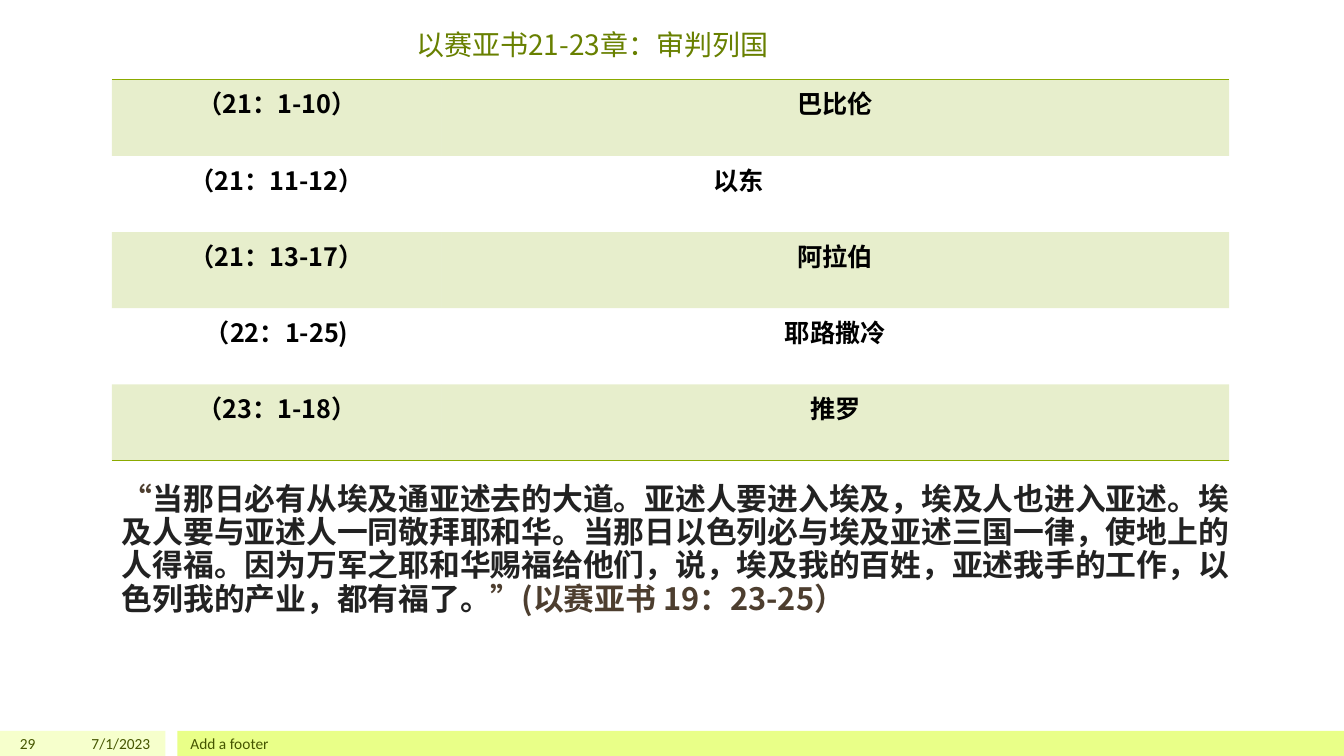
from pptx import Presentation
from pptx.dml.color import RGBColor
from pptx.enum.shapes import MSO_SHAPE as Shape
from pptx.enum.text import MSO_ANCHOR as Anchor, PP_ALIGN as Align
from pptx.oxml import parse_xml
from pptx.oxml.ns import nsdecls, qn
from pptx.util import Pt

PX = 9144
CJK = "Noto Sans CJK SC"
GREEN, BROWN, DARK = "8BAA00", "4D3E2F", "222222"


def tint(code):
    return RGBColor.from_string(code)


def edge(side, code=None):
    fill = f'<a:solidFill><a:srgbClr val="{code}"/></a:solidFill>' if code else "<a:noFill/>"
    return parse_xml(f'<a:{side} {nsdecls("a")} w="12700">{fill}</a:{side}>')


class Deck:
    """Holds the style and current slide, and draws each kind of element."""

    def __init__(self, wide, high):
        self.show = Presentation()
        self.show.slide_width, self.show.slide_height = wide * PX, high * PX
        self.slide = self.show.slides.add_slide(self.show.slide_layouts[6])

    def bar(self, box, code):
        shape = self.slide.shapes.add_shape(Shape.RECTANGLE, *(n * PX for n in box))
        shape.shadow.inherit = False
        shape.fill.solid()
        shape.fill.fore_color.rgb = tint(code)
        shape.line.fill.background()

    def style(self, para, runs, size, font=CJK, bold=False, **form):
        for name, value in form.items():
            setattr(para, name, value)
        for words, code in runs:
            run = para.add_run()
            run.text = words
            look = {"size": Pt(size), "name": font, "bold": bold}
            for name, value in look.items():
                setattr(run.font, name, value)
            run.font.color.rgb = tint(code)
            if font == CJK:
                props = run._r.get_or_add_rPr()
                props.set("lang", "zh-CN")
                props.append(parse_xml(f'<a:ea {nsdecls("a")} typeface="{font}"/>'))

    def text(self, box, runs, size, anchor=Anchor.TOP, **form):
        frame = self.slide.shapes.add_textbox(*(n * PX for n in box)).text_frame
        frame.word_wrap = True
        frame.vertical_anchor = anchor
        self.style(frame.paragraphs[0], runs, size, **form)

    def table(self, box, cols, rows, shift):
        grid = self.slide.shapes.add_table(len(rows), len(cols), *(n * PX for n in box)).table
        grid.first_row = grid.horz_banding = False
        for col, width in zip(grid.columns, cols):
            col.width = width * PX
        for i, row in enumerate(rows):
            for j, words in enumerate(row):
                cell = grid.cell(i, j)
                cell.margin_right = shift.get((i, j), 10) * PX
                self.style(cell.text_frame.paragraphs[0], [(words, "000000")], 18,
                           bold=True, alignment=Align.CENTER)
                self.band(cell, i % 2 == 0)
                lines = {"lnL": None, "lnR": None, "lnT": GREEN if i == 0 else None,
                         "lnB": GREEN if i == len(rows) - 1 else None}
                for k, (side, code) in enumerate(lines.items()):
                    cell._tc.tcPr.insert(k, edge(side, code))

    def band(self, cell, shaded):
        if not shaded:
            cell.fill.background()
            return
        cell.fill.solid()
        cell.fill.fore_color.rgb = tint(GREEN)
        color = cell._tc.tcPr.find(".//" + qn("a:srgbClr"))
        color.append(parse_xml(f'<a:alpha {nsdecls("a")} val="20000"/>'))


def main():
    deck = Deck(1333, 750)
    deck.bar((0, 725, 164, 25), "F6FFCC")
    deck.bar((176, 725, 1157, 25), "E9FF88")
    deck.text((72, 8, 1031, 58), [("以赛亚书21-23章：审判列国", "688000")], 20,
              Anchor.BOTTOM, alignment=Align.CENTER)
    feet = [((0, 725, 45, 25), "29", Align.RIGHT),
            ((50, 725, 109, 25), "7/1/2023", Align.RIGHT),
            ((179, 725, 1000, 25), "Add a footer", Align.LEFT)]
    for box, words, side in feet:
        deck.text(box, [(words, "455500")], 11, Anchor.MIDDLE, font="Calibri", alignment=side)
    rows = [("（21：1-10）", "巴比伦"), ("（21：11-12）", "以东"), ("（21：13-17）", "阿拉伯"),
            ("（22：1-25)", "耶路撒冷"), ("（23：1-18）", "推罗")]
    deck.table((111, 79, 1108, 378), (327, 781), rows, {(1, 1): 202})
    verse = ("当那日必有从埃及通亚述去的大道。亚述人要进入埃及，埃及人也进入亚述。"
             "埃及人要与亚述人一同敬拜耶和华。当那日以色列必与埃及亚述三国一律，使地上的人得福。"
             "因为万军之耶和华赐福给他们，说，埃及我的百姓，亚述我手的工作，以色列我的产业，都有福了。")
    deck.text((111, 475, 1120, 201),
              [("“", BROWN), (verse, DARK), ("”(以赛亚书 19：23-25）", BROWN)], 22,
              bold=True, line_spacing=0.9, space_before=Pt(11))
    deck.show.save("out.pptx")


if __name__ == "__main__":
    main()
